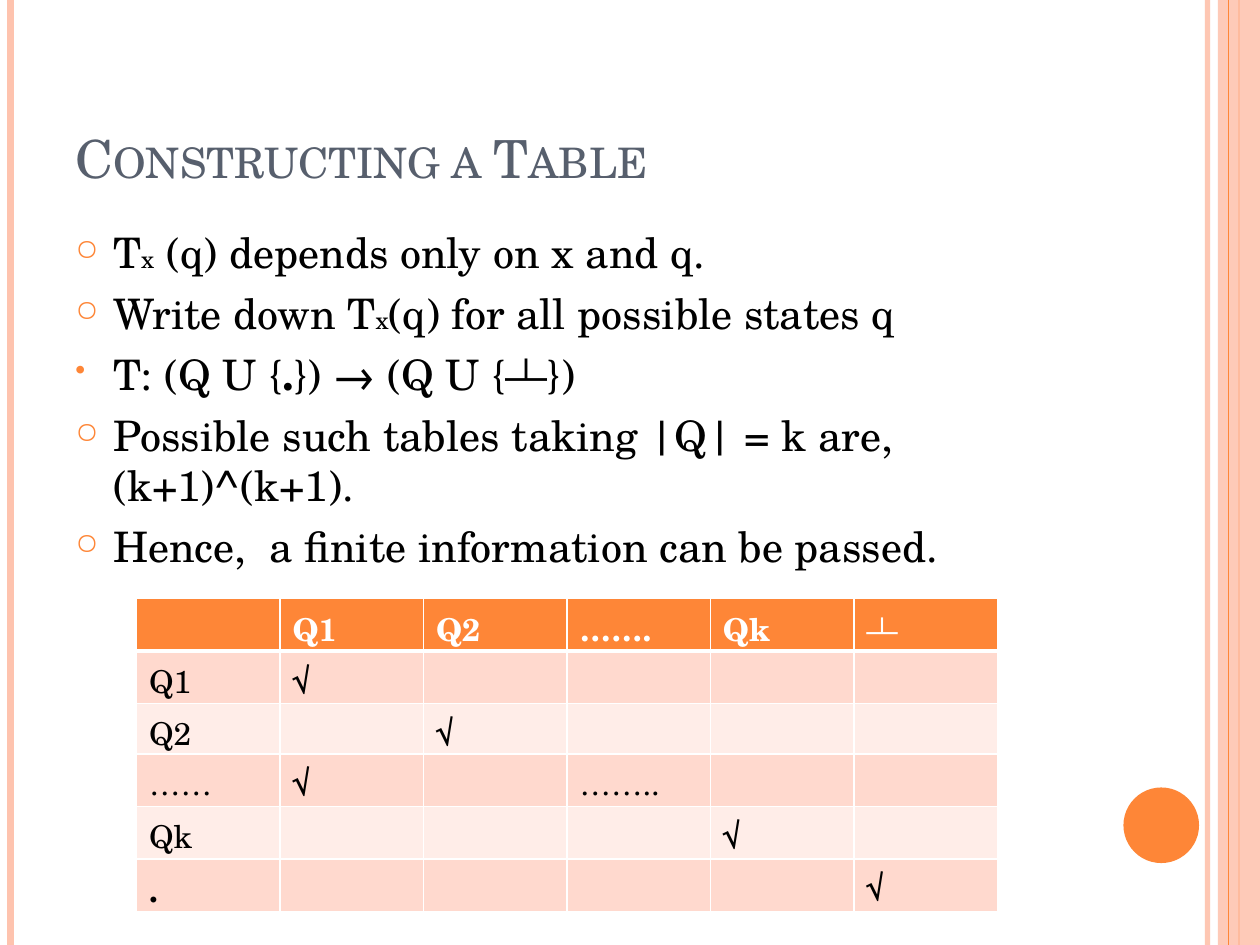
from lxml.etree import SubElement
from pptx import Presentation
from pptx.dml.color import RGBColor
from pptx.enum.shapes import MSO_CONNECTOR as CONN, MSO_SHAPE as SHAPE
from pptx.enum.text import MSO_ANCHOR as ANCHOR
from pptx.oxml.ns import qn
from pptx.util import Pt

FONT = "TeX Gyre Schola"
ORANGE, PEACH, WHITE, BLACK, SLATE = "FE8637", "FEC3AE", "FFFFFF", "000000", "575F6D"
BANDS = "FFD9CE", "FFEDE8"
HOLLOW, DOT = "○", "•"

# Each bullet: its mark, then runs of (text, size, bold)
BULLETS = [
    (HOLLOW, [("T", 24, False), ("x", 14, False),
              (" (q) depends only on x and q.", 24, False)]),
    (HOLLOW, [("Write down T", 24, False), ("x", 14, False),
              ("(q) for all possible states q", 24, False)]),
    (DOT, [("T: (Q U {", 24, False), (".", 24, True),
           ("}) → (Q U {┴})", 24, False)]),
    (HOLLOW, [("Possible such tables taking |Q| = k are, (k+1)^(k+1).", 24, False)]),
    (HOLLOW, [("Hence,  a finite information can be passed.", 24, False)]),
]
TABLE = [
    ["", "Q1", "Q2", "…….", "Qk", "┴"],
    ["Q1", "√", "", "", "", ""],
    ["Q2", "", "√", "", "", ""],
    ["……", "√", "", "……..", "", ""],
    ["Qk", "", "", "", "√", ""],
    [".", "", "", "", "", "√"],
]
ROW_HEIGHTS = [30, 30, 18, 30, 30, 30]


def rgb(hex_color):
    return RGBColor.from_string(hex_color)


def add_run(p, text, size, color, bold=False):
    r = p.add_run()
    r.text = text
    r.font.name = FONT
    r.font.size = Pt(size)
    r.font.bold = bold
    r.font.color.rgb = rgb(color)
    return r


def set_alpha(fill_parent, percent):
    """Make the solid fill found inside an element partly transparent."""
    clr = fill_parent.find(qn("a:solidFill"))[0]
    SubElement(clr, qn("a:alpha"), val=str(percent * 1000))


def add_rule(s, x, height, color, width, alpha=None):
    line = s.shapes.add_connector(CONN.STRAIGHT, Pt(x), Pt(0), Pt(x), Pt(height))
    line.line.color.rgb = rgb(color)
    line.line.width = Pt(width)
    if alpha:
        set_alpha(line.line._get_or_add_ln(), alpha)
    SubElement(line._element.spPr, qn("a:effectLst"))


def add_solid(s, kind, left, top, width, height, color):
    sp = s.shapes.add_shape(kind, Pt(left), Pt(top), Pt(width), Pt(height))
    sp.shadow.inherit = False
    sp.fill.solid()
    sp.fill.fore_color.rgb = rgb(color)
    sp.line.fill.background()
    return sp


def add_frame(s, width, height):
    """Stripes at both edges and the disc near the lower right corner."""
    add_rule(s, width - 30, height, PEACH, 3, 93)
    add_rule(s, 6, height, PEACH, 4.5)
    add_rule(s, width - 12, height, ORANGE, 1.5)
    band = add_solid(s, SHAPE.RECTANGLE, width - 24, 0, 24, height, PEACH)
    set_alpha(band._element.spPr, 87)
    add_rule(s, width - 18, height, ORANGE, 0.75)
    add_solid(s, SHAPE.OVAL, width - 78, height - 90, 43.2, 43.2, ORANGE)


def add_text_frame(s, left, top, width, height):
    tf = s.shapes.add_textbox(Pt(left), Pt(top), Pt(width), Pt(height)).text_frame
    tf.word_wrap = True
    return tf


def add_title(s, left, top, width, height):
    tf = add_text_frame(s, left, top, width, height)
    tf.vertical_anchor = ANCHOR.BOTTOM
    r = add_run(tf.paragraphs[0], "Constructing a Table", 30, SLATE)
    r.font._element.set("cap", "small")


def set_bullet(p, mark):
    pPr = p._p.get_or_add_pPr()
    pPr.set("marL", str(Pt(21.6)))
    pPr.set("indent", str(-Pt(21.6)))
    SubElement(SubElement(pPr, qn("a:buClr")), qn("a:srgbClr"), val=ORANGE)
    SubElement(pPr, qn("a:buSzPct"), val="70000")
    SubElement(pPr, qn("a:buChar"), char=mark)


def add_bullets(s, left, top, width, height):
    tf = add_text_frame(s, left, top, width, height)
    for i, (mark, runs) in enumerate(BULLETS):
        p = tf.add_paragraph() if i else tf.paragraphs[0]
        p.space_before = Pt(6)
        set_bullet(p, mark)
        for text, size, bold in runs:
            add_run(p, text, size, BLACK, bold)


def set_borders(cell, top, bottom):
    tcPr = cell._tc.get_or_add_tcPr()
    for side, width in (("L", 1), ("R", 1), ("T", top), ("B", bottom)):
        ln = SubElement(tcPr, qn(f"a:ln{side}"), w=str(Pt(width)))
        SubElement(SubElement(ln, qn("a:solidFill")), qn("a:srgbClr"), val=WHITE)


def add_state_table(s, left, top, width):
    rows, cols = len(TABLE), len(TABLE[0])
    table = s.shapes.add_table(rows, cols, Pt(left), Pt(top), Pt(width),
                               Pt(sum(ROW_HEIGHTS))).table
    for col in table.columns:
        col.width = Pt(width / cols)
    for i, (row, height) in enumerate(zip(TABLE, ROW_HEIGHTS)):
        table.rows[i].height = Pt(height)
        header = i == 0
        for j, text in enumerate(row):
            cell = table.cell(i, j)
            set_borders(cell, 3 if i == 1 else 1, 3 if header else 1)
            cell.fill.solid()
            cell.fill.fore_color.rgb = rgb(ORANGE if header else BANDS[(i - 1) % 2])
            if text:
                add_run(cell.text_frame.paragraphs[0], text, 18,
                        WHITE if header else BLACK, header or text == ".")


def main():
    prs = Presentation()
    prs.slide_width, prs.slide_height = Pt(720), Pt(540)
    s = prs.slides.add_slide(prs.slide_layouts[6])
    add_frame(s, 720, 540)
    add_title(s, 36, 21.6, 588, 90)
    add_bullets(s, 36, 126, 588, 384)
    add_state_table(s, 78, 342, 492)
    prs.save("out.pptx")


if __name__ == "__main__":
    main()
